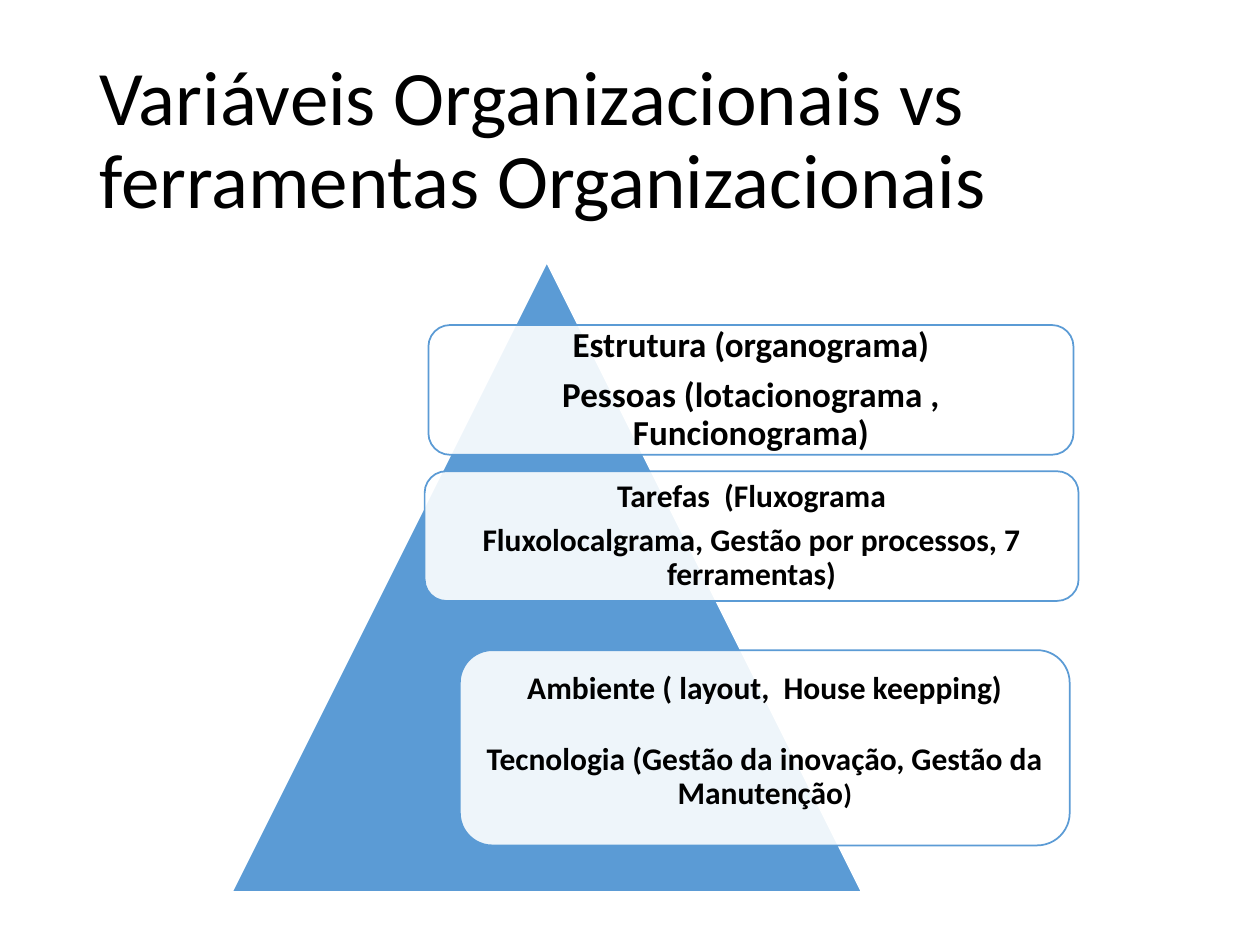
from pptx import Presentation
from pptx.dml.color import RGBColor
from pptx.enum.shapes import MSO_SHAPE
from pptx.enum.text import MSO_ANCHOR, PP_ALIGN
from pptx.oxml.ns import qn
from pptx.util import Inches, Pt
from lxml import etree

BLUE, WHITE, BLACK = "5B9BD5", "FFFFFF", "000000"

# Box position, inset, space after the first paragraph, extra bottom inset,
# paragraphs as lists of (text, size)
BOXES = [
    ((3.4, 2.58, 5.12, 1.03), 0.08, 7, 0,
     [[("Estrutura (organograma)", 20)],
      [("Pessoas (lotacionograma , Funcionograma)", 20)]]),
    ((3.37, 3.74, 5.19, 1.03), 0.07, 6, 0,
     [[("Tarefas  (Fluxograma", 18)],
      [("Fluxolocalgrama, Gestão por processos, 7 ferramentas)", 18)]]),
    ((3.65, 5.16, 4.84, 1.55), 0.07, 21, 0.1,
     [[("Ambiente ( layout,  House keepping)", 18)],
      [("Tecnologia (Gestão da inovação, Gestão da Manutenção", 18),
       (")", 16)]]),
]


def color(value):
    return RGBColor.from_string(value)


def set_attrs(obj, values):
    for name, value in values.items():
        setattr(obj, name, value)


def add_run(p, text, size, bold=False):
    r = p.add_run()
    r.text = text
    set_attrs(r.font, {"name": "Calibri", "size": Pt(size), "bold": bold})
    r.font.color.rgb = color(BLACK)


def add_title(s, text):
    sp = s.shapes.title
    set_attrs(sp, {"left": Inches(0.69), "top": Inches(0.4),
                   "width": Inches(8.62), "height": Inches(1.45)})
    tf = sp.text_frame
    set_attrs(tf, {"vertical_anchor": MSO_ANCHOR.MIDDLE, "word_wrap": True})
    p = tf.paragraphs[0]
    set_attrs(p, {"alignment": PP_ALIGN.LEFT, "line_spacing": 0.9})
    add_run(p, text, 44)


def add_figure(s, kind, at, fill, line):
    sp = s.shapes.add_shape(kind, *map(Inches, at))
    sp.shadow.inherit = False
    sp.fill.solid()
    sp.fill.fore_color.rgb = color(fill)
    sp.line.color.rgb = color(line)
    sp.line.width = Pt(1)
    return sp


def set_opacity(sp, percent):
    clr = sp.fill._xPr.find(qn("a:solidFill"))[0]
    etree.SubElement(clr, qn("a:alpha")).set("val", str(percent * 1000))


def add_box(s, at, inset, gap, extra, paragraphs):
    sp = add_figure(s, MSO_SHAPE.ROUNDED_RECTANGLE, at, WHITE, BLUE)
    set_opacity(sp, 90)
    tf = sp.text_frame
    set_attrs(tf, {"word_wrap": True, "vertical_anchor": MSO_ANCHOR.MIDDLE,
                   "margin_left": Inches(inset), "margin_right": Inches(inset),
                   "margin_top": Inches(inset),
                   "margin_bottom": Inches(inset + extra)})
    for i, runs in enumerate(paragraphs):
        p = tf.add_paragraph() if i else tf.paragraphs[0]
        last = i == len(paragraphs) - 1
        set_attrs(p, {"alignment": PP_ALIGN.CENTER, "line_spacing": 0.9,
                      "space_after": Pt(0 if last else gap)})
        for text, size in runs:
            add_run(p, text, size, bold=True)


def main():
    prs = Presentation()
    set_attrs(prs, {"slide_width": Inches(10), "slide_height": Inches(7.5)})
    s = prs.slides.add_slide(prs.slide_layouts[5])

    # Title
    add_title(s, "Variáveis Organizacionais vs ferramentas Organizacionais")

    # Pyramid with its three labels
    add_figure(s, MSO_SHAPE.ISOSCELES_TRIANGLE, (1.84, 2.08, 5, 5), BLUE, WHITE)
    for box in BOXES:
        add_box(s, *box)

    prs.save("out.pptx")


if __name__ == "__main__":
    main()
